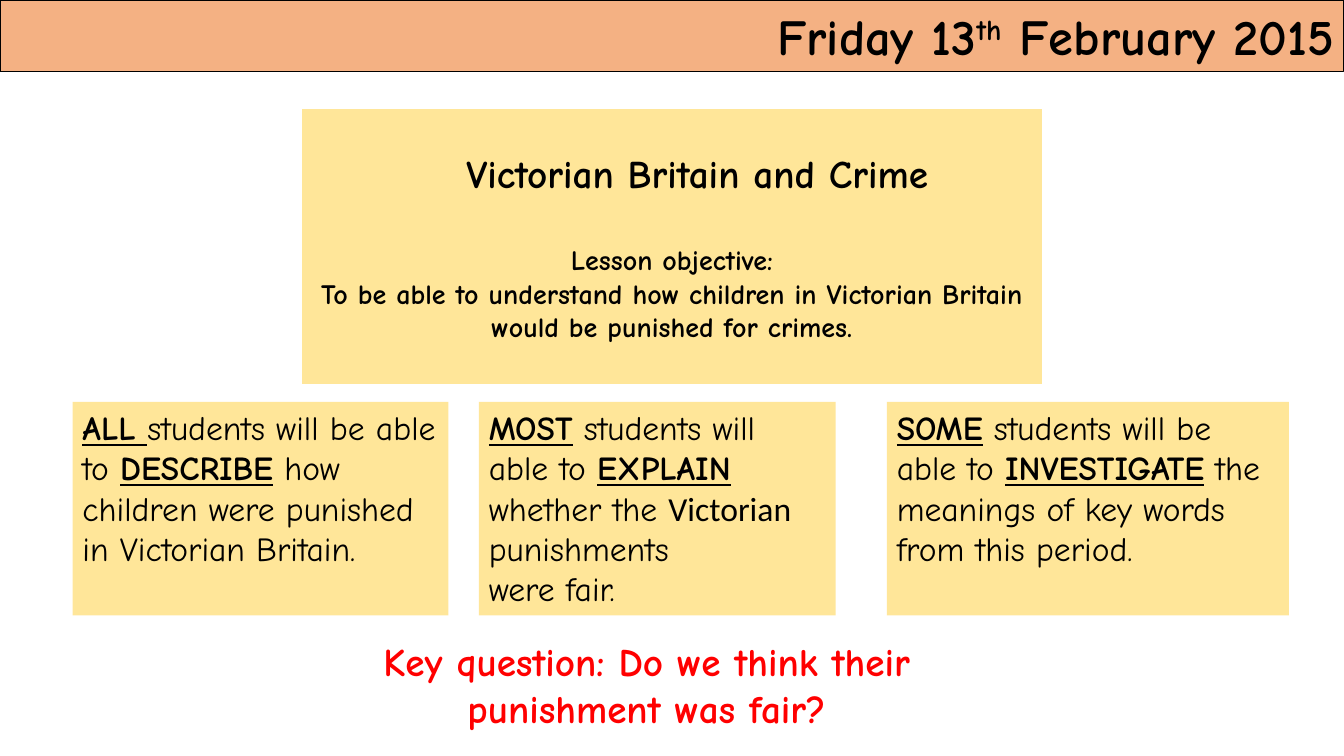
from pptx import Presentation
from pptx.dml.color import RGBColor
from pptx.enum.shapes import MSO_SHAPE
from pptx.enum.text import MSO_ANCHOR, PP_ALIGN
from pptx.util import Cm, Pt

RECTANGLE = MSO_SHAPE.RECTANGLE
TOP, MIDDLE = MSO_ANCHOR.TOP, MSO_ANCHOR.MIDDLE
LEFT, CENTER, RIGHT = PP_ALIGN.LEFT, PP_ALIGN.CENTER, PP_ALIGN.RIGHT
COLORS = {"banner": "F4B183", "card": "FFE699", "ink": "000000",
          "question": "FF0000", "edge": "FFFFFF"}
FONT = "Comic Neue"


def add_run(paragraph, text, size, bold=True, color="ink", font=FONT):
    run = paragraph.add_run()
    run.text = text
    run.font.size = Pt(size)
    run.font.bold = bold
    run.font.name = font
    run.font.color.rgb = RGBColor.from_string(COLORS[color])
    return run


def add_card(left, top, width, height, anchor):
    card = slide.shapes.add_shape(RECTANGLE, Cm(left), Cm(top), Cm(width), Cm(height))
    card.shadow.inherit = False
    card.fill.solid()
    card.fill.fore_color.rgb = RGBColor.from_string(COLORS["card"])
    card.line.fill.background()
    card.text_frame.word_wrap = True
    card.text_frame.vertical_anchor = anchor
    return card


prs = Presentation()
prs.slide_width, prs.slide_height = Cm(33.87), Cm(19.05)
slide = prs.slides.add_slide(prs.slide_layouts[5])

# Date banner
date = slide.shapes.title
date.left, date.top, date.width, date.height = Cm(0), Cm(0), prs.slide_width, Cm(1.8)
date.fill.solid()
date.fill.fore_color.rgb = RGBColor.from_string(COLORS["banner"])
date.line.color.rgb = RGBColor.from_string(COLORS["ink"])
date.line.width = Pt(0.75)
date.text_frame.vertical_anchor = TOP
date_line = date.text_frame.paragraphs[0]
date_line.alignment = RIGHT
add_run(date_line, "Friday 13", 36)
ordinal = add_run(date_line, "th", 36)
ordinal.font._element.set("baseline", "30000")
add_run(date_line, " February 2015", 36)

# Topic and lesson objective
topic = add_card(7.59, 2.72, 18.69, 6.98, MIDDLE)
topic.line.color.rgb = RGBColor.from_string(COLORS["edge"])
topic.line.width = Pt(1.5)
heading = topic.text_frame.paragraphs[0]
add_run(heading, "Victorian Britain and Crime", 28)
objective_label = topic.text_frame.add_paragraph()
objective_label.space_before = Pt(33)
add_run(objective_label, "Lesson objective:", 20)
objective = topic.text_frame.add_paragraph()
add_run(objective, "To be able to understand how children in Victorian Britain "
                   "would be punished for crimes.", 20)
for line in (heading, objective_label, objective):
    line.alignment = CENTER

# Outcomes: left, width, who, link, verb, remainder
outcomes = [
    (1.83, 9.47, "ALL ", "students will be able to ", "DESCRIBE",
     " how children were punished in Victorian Britain."),
    (12.07, 8.99, "MOST", " students will able to ", "EXPLAIN", " whether the "),
    (22.35, 10.13, "SOME", " students will be able to ", "INVESTIGATE",
     " the meanings of key words from this period."),
]
for left, width, who, link, verb, remainder in outcomes:
    outcome = add_card(left, 10.13, width, 5.38, TOP).text_frame.paragraphs[0]
    outcome.alignment = LEFT
    for emphasis, plain in ((who, link), (verb, remainder)):
        add_run(outcome, emphasis, 24).font.underline = True
        add_run(outcome, plain, 24, bold=False)
    if who == "MOST":
        add_run(outcome, "Victorian ", 24, bold=False, font="Calibri")
        add_run(outcome, "punishments", 24, bold=False)
        outcome.add_line_break()
        add_run(outcome, "were fair.", 24, bold=False)

# Key question
question_box = slide.shapes.add_textbox(Cm(7.19), Cm(15.93), Cm(16.94), Cm(2.64))
question_box.text_frame.word_wrap = True
question = question_box.text_frame.paragraphs[0]
question.alignment = CENTER
add_run(question, "Key question: Do we think their punishment was fair?", 28,
        color="question")

# Indent of the heading and the key question
for indented in (heading, question):
    indented.level = 1
    indented._p.get_or_add_pPr().set("marL", str(Cm(1.27)))

prs.save("out.pptx")
